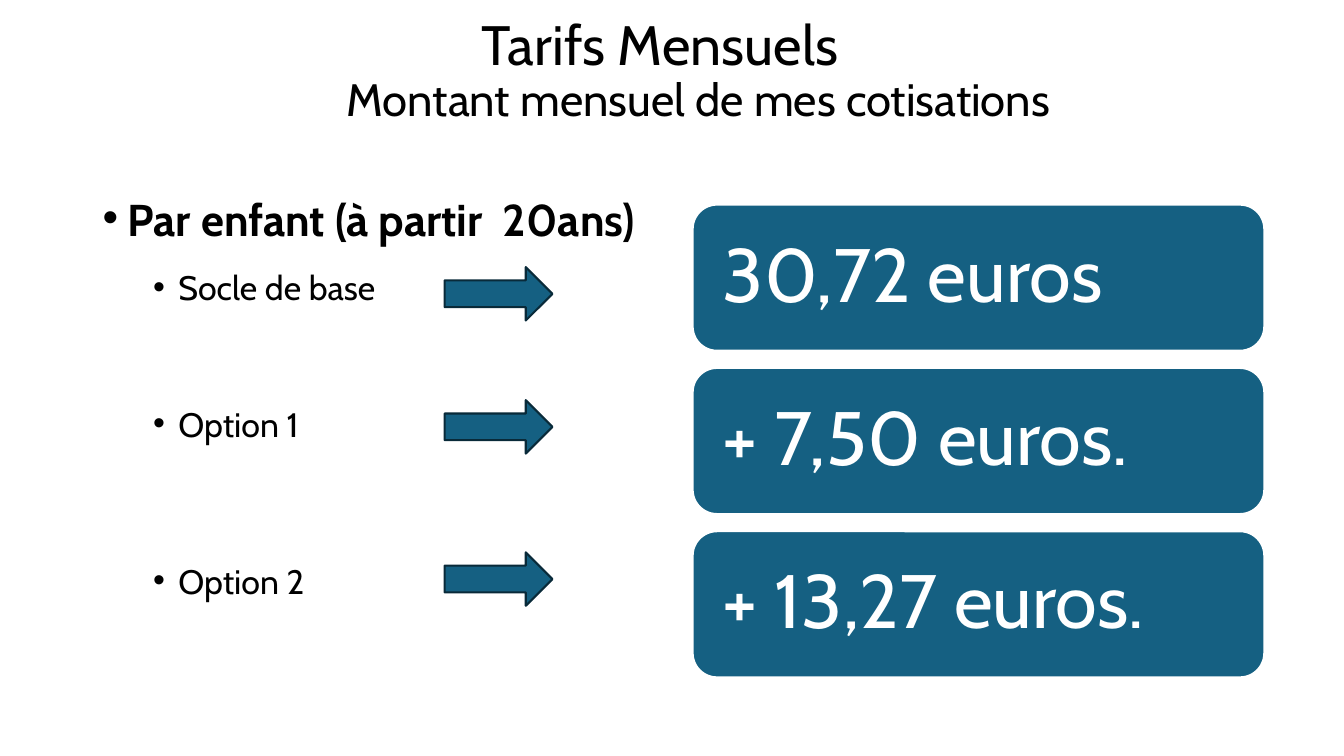
from lxml import etree
from pptx import Presentation
from pptx.dml.color import RGBColor
from pptx.enum import shapes, text
from pptx.oxml.ns import qn
from pptx.util import Inches, Pt

FONT = "Cabin"
BLUE, DARK, BLACK, WHITE = "156082", "092A39", "000000", "FFFFFF"
PRICES = ["30,72 euros", "+ 7,50 euros.", "+ 13,27 euros."]
ARROW_TOPS = [2.65, 3.97, 5.48]


def color(value):
    return RGBColor.from_string(value)


def style(para, size, shade, bold=False, spacing=0.9):
    para.line_spacing = spacing
    for span in para.runs:
        span.font.name = FONT
        span.font.size = Pt(size)
        span.font.bold = bold
        span.font.color.rgb = color(shade)


def indent(para, left, hanging=0.0, bullet=None):
    properties = para._p.get_or_add_pPr()
    properties.set("marL", str(Inches(left)))
    properties.set("indent", str(Inches(-hanging)))
    if bullet:
        font = etree.SubElement(properties, qn("a:buFont"))
        font.set("typeface", "Arial")
        etree.SubElement(properties, qn("a:buChar")).set("char", bullet)


def add_text(page, left, top, width, height, lines):
    box = page.shapes.add_textbox(*map(Inches, (left, top, width, height)))
    frame = box.text_frame
    frame.word_wrap = True
    frame.text = "\n".join(lines)
    return frame


def add_block(page, kind, left, top, width, height, line):
    block = page.shapes.add_shape(kind, *map(Inches, (left, top, width, height)))
    block.shadow.inherit = False
    block.fill.solid()
    block.fill.fore_color.rgb = color(BLUE)
    block.line.color.rgb = color(line)
    block.line.width = Pt(1.5)
    return block


def add_title(page, left, top, width, height):
    frame = add_text(page, left, top, width, height,
                     ["Tarifs Mensuels", "Montant mensuel de mes cotisations"])
    frame.vertical_anchor = text.MSO_ANCHOR.MIDDLE
    for para, size, offset in zip(frame.paragraphs, (39.6, 32.4), (3.42, 2.08)):
        style(para, size, BLACK)
        indent(para, offset)


def add_options(page, left, top, width, height):
    frame = add_text(page, left, top, width, height,
                     ["Par enfant (à partir  20ans)", "Socle de base", "Option 1", "Option 2"])
    heading, *options = frame.paragraphs
    style(heading, 31.8, BLACK, bold=True, spacing=0.7)
    indent(heading, 0.25, 0.25, "•")
    for para, gap in zip(options, (24.5, 77.3, 91.5)):
        style(para, 24.2, BLACK, spacing=0.7)
        para.space_before = Pt(gap)
        indent(para, 0.75, 0.25, "•")


def add_prices(page, left, top, width, height, pitch):
    for row, price in enumerate(PRICES):
        card = add_block(page, shapes.MSO_SHAPE.ROUNDED_RECTANGLE,
                         left, top + row * pitch, width, height, WHITE)
        frame = card.text_frame
        frame.word_wrap = True
        frame.margin_left = frame.margin_right = Inches(0.23)
        frame.vertical_anchor = text.MSO_ANCHOR.MIDDLE
        frame.text = price
        para = frame.paragraphs[0]
        para.alignment = text.PP_ALIGN.LEFT
        style(para, 54, WHITE)


def add_arrows(page, left, width, height):
    for top in ARROW_TOPS:
        add_block(page, shapes.MSO_SHAPE.RIGHT_ARROW, left, top, width, height, DARK)


def main():
    deck = Presentation()
    deck.slide_width, deck.slide_height = Inches(13.33), Inches(7.5)
    page = deck.slides.add_slide(deck.slide_layouts[6])
    add_title(page, 1.26, 0.22, 11.5, 0.99)
    add_options(page, 0.92, 2, 5.96, 4.76)
    add_prices(page, 6.87, 2.03, 5.67, 1.45, pitch=1.62)
    add_arrows(page, 4.41, 1.07, 0.53)
    deck.save("out.pptx")


if __name__ == "__main__":
    main()
